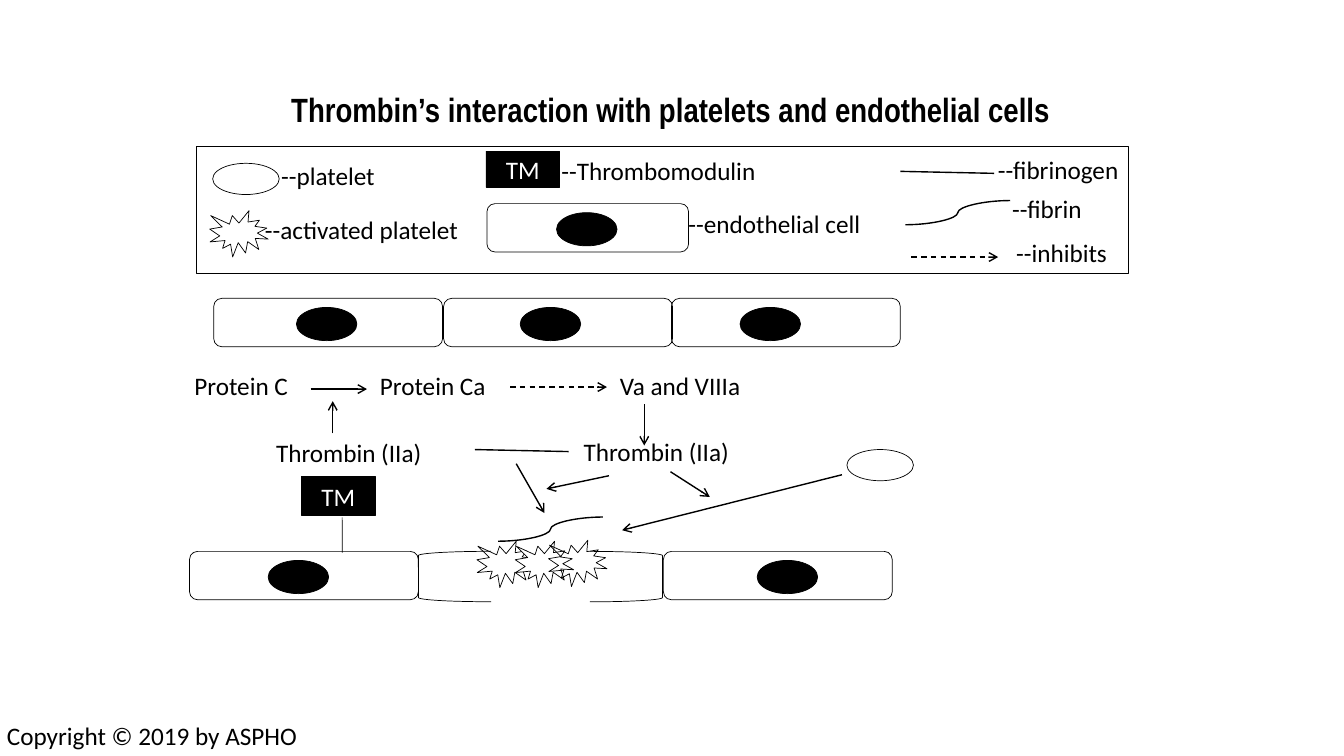
from lxml import etree
from pptx import Presentation
from pptx.dml.color import RGBColor
from pptx.enum.dml import MSO_LINE
from pptx.enum.shapes import MSO_CONNECTOR, MSO_SHAPE
from pptx.enum.text import MSO_ANCHOR, PP_ALIGN
from pptx.oxml.ns import qn
from pptx.util import Inches, Pt

BLACK = RGBColor(0, 0, 0)
WHITE = RGBColor(255, 255, 255)
BODY_FONT = "Calibri"
TITLE_FONT = "Arial Narrow"
RECTANGLE = MSO_SHAPE.RECTANGLE
ROUNDED = MSO_SHAPE.ROUNDED_RECTANGLE
OVAL = MSO_SHAPE.OVAL
BURST = MSO_SHAPE.EXPLOSION1
BRACKET = MSO_SHAPE.LEFT_BRACKET
CALLOUT = MSO_SHAPE.LINE_CALLOUT_1
STRAIGHT = MSO_CONNECTOR.STRAIGHT
CURVE = MSO_CONNECTOR.CURVE
DASH = MSO_LINE.DASH
TOP = MSO_ANCHOR.TOP
MIDDLE = MSO_ANCHOR.MIDDLE
LEFT = PP_ALIGN.LEFT
CENTER = PP_ALIGN.CENTER

LABELS = [
    ("--Thrombomodulin", 5.47, 1.49, 2.46),
    ("--activated platelet", 2.53, 2.08, 2.46),
    ("--fibrin", 9.94, 1.87, 0.97),
    ("--platelet", 2.69, 1.54, 1.3),
    ("--fibrinogen", 9.8, 1.48, 1.64),
    ("--endothelial cell", 6.73, 2.02, 2.08),
    ("--inhibits", 9.98, 2.31, 1.18),
    ("Thrombin (IIa)", 5.69, 4.28, 1.93),
    ("Thrombin (IIa)", 2.64, 4.29, 1.93),
    ("Protein C", 1.83, 3.62, 1.35),
    ("Protein Ca", 3.67, 3.62, 1.77),
    ("Va and VIIIa", 6.05, 3.62, 1.95),
]
ARROWS = [
    (3.3, 4.3, 3.3, 3.98),
    (3.08, 3.86, 3.64, 3.86),
    (6.65, 4.68, 7.04, 4.93),
    (8.35, 4.71, 6.17, 5.26),
    (6.04, 4.72, 5.42, 4.85),
    (5.12, 4.6, 5.4, 5.09),
    (6.39, 4.01, 6.39, 4.42),
]
INHIBITIONS = [(5.06, 3.84, 6.02, 3.84), (9.04, 2.55, 9.9, 2.55)]
FIBRINOGENS = [(4.71, 4.46, 5.64, 4.48), (8.93, 1.7, 9.86, 1.72)]
FIBRINS = [(4.94, 5.37, 5.98, 5.13), (8.98, 2.23, 10.02, 1.99)]


def write_text(shape, text, size=18, font=BODY_FONT, color=BLACK, bold=False,
               align=LEFT, anchor=TOP, wrap=True):
    frame = shape.text_frame
    frame.word_wrap = wrap
    frame.vertical_anchor = anchor
    para = frame.paragraphs[0]
    para.alignment = align
    span = para.add_run()
    span.text = text
    span.font.size = Pt(size)
    span.font.name = font
    span.font.bold = bold
    span.font.color.rgb = color


def add_label(page, text, left, top, width, height=0.4, **text_format):
    box = page.shapes.add_textbox(Inches(left), Inches(top), Inches(width), Inches(height))
    write_text(box, text, **text_format)


def add_outlined(page, kind, left, top, width, height, fill=None):
    shape = page.shapes.add_shape(
        kind, Inches(left), Inches(top), Inches(width), Inches(height))
    shape.shadow.inherit = False
    shape.line.color.rgb = BLACK
    shape.line.width = Pt(0.5)
    if fill is None:
        shape.fill.background()
    else:
        shape.fill.solid()
        shape.fill.fore_color.rgb = fill
    return shape


def add_cell(page, left, top, nucleus_left, width=2.27):
    add_outlined(page, ROUNDED, left, top, width, 0.48)
    add_outlined(page, OVAL, nucleus_left, top + 0.09, 0.6, 0.33, BLACK)


def add_platelet(page, left, top):
    add_outlined(page, OVAL, left, top, 0.66, 0.31, WHITE)


def add_activated_platelet(page, left, top, fill=None):
    add_outlined(page, BURST, left, top, 0.58, 0.46, fill)


def add_thrombomodulin(page, kind, left, top, height):
    shape = add_outlined(page, kind, left, top, 0.73, height, BLACK)
    write_text(shape, "TM", color=WHITE, align=CENTER, anchor=MIDDLE)
    return shape


def add_line(page, x1, y1, x2, y2, kind=STRAIGHT, arrow=False, dash=None):
    line = page.shapes.add_connector(kind, Inches(x1), Inches(y1), Inches(x2), Inches(y2))
    line.line.color.rgb = BLACK
    line.line.width = Pt(1)
    if dash is not None:
        line.line.dash_style = dash
    properties = line._element.spPr
    if arrow:
        etree.SubElement(properties.find(qn("a:ln")), qn("a:tailEnd"), type="arrow")
    etree.SubElement(properties, qn("a:effectLst"))


def draw_lower_vessel_wall(page):
    add_cell(page, 1.88, 5.47, 2.66)
    add_cell(page, 6.58, 5.47, 7.51)
    add_outlined(page, BRACKET, 4.15, 5.47, 0.72, 0.5)
    add_outlined(page, BRACKET, 5.85, 5.47, 0.72, 0.5).rotation = 180
    receptor = add_thrombomodulin(page, CALLOUT, 2.99, 4.73, 0.38)
    for index, value in enumerate((1.057, 0.553, 1.98, 0.555)):
        receptor.adjustments[index] = value
    add_activated_platelet(page, 4.73, 5.37)
    add_activated_platelet(page, 5.11, 5.37, WHITE)
    add_activated_platelet(page, 5.44, 5.36)


def draw_upper_vessel_wall(page):
    for left, nucleus_left in ((2.12, 2.94), (4.4, 5.16), (6.66, 7.34)):
        add_cell(page, left, 2.96, nucleus_left)


def draw_legend(page):
    add_outlined(page, RECTANGLE, 1.95, 1.45, 9.24, 1.26)
    add_platelet(page, 2.11, 1.62)
    add_activated_platelet(page, 2.08, 2.09, WHITE)
    add_thrombomodulin(page, RECTANGLE, 4.82, 1.5, 0.36)
    add_cell(page, 4.83, 2.02, 5.52, width=2)


def main():
    deck = Presentation()
    deck.slide_width = Inches(13.33)
    deck.slide_height = Inches(7.5)
    page = deck.slides.add_slide(deck.slide_layouts[6])

    add_label(page, "Thrombin’s interaction with platelets and endothelial cells",
              2.79, 0.83, 8.05, 0.88, size=24, font=TITLE_FONT, bold=True)
    draw_legend(page)
    draw_upper_vessel_wall(page)
    draw_lower_vessel_wall(page)
    add_platelet(page, 8.4, 4.46)

    for label in LABELS:
        add_label(page, *label)
    for ends in ARROWS:
        add_line(page, *ends, arrow=True)
    for ends in INHIBITIONS:
        add_line(page, *ends, arrow=True, dash=DASH)
    for ends in FIBRINOGENS:
        add_line(page, *ends)
    for ends in FIBRINS:
        add_line(page, *ends, kind=CURVE)

    add_label(page, "Copyright © 2019 by ASPHO", -0.03, 7.1, 3.11, wrap=False)
    deck.save("out.pptx")


if __name__ == "__main__":
    main()
